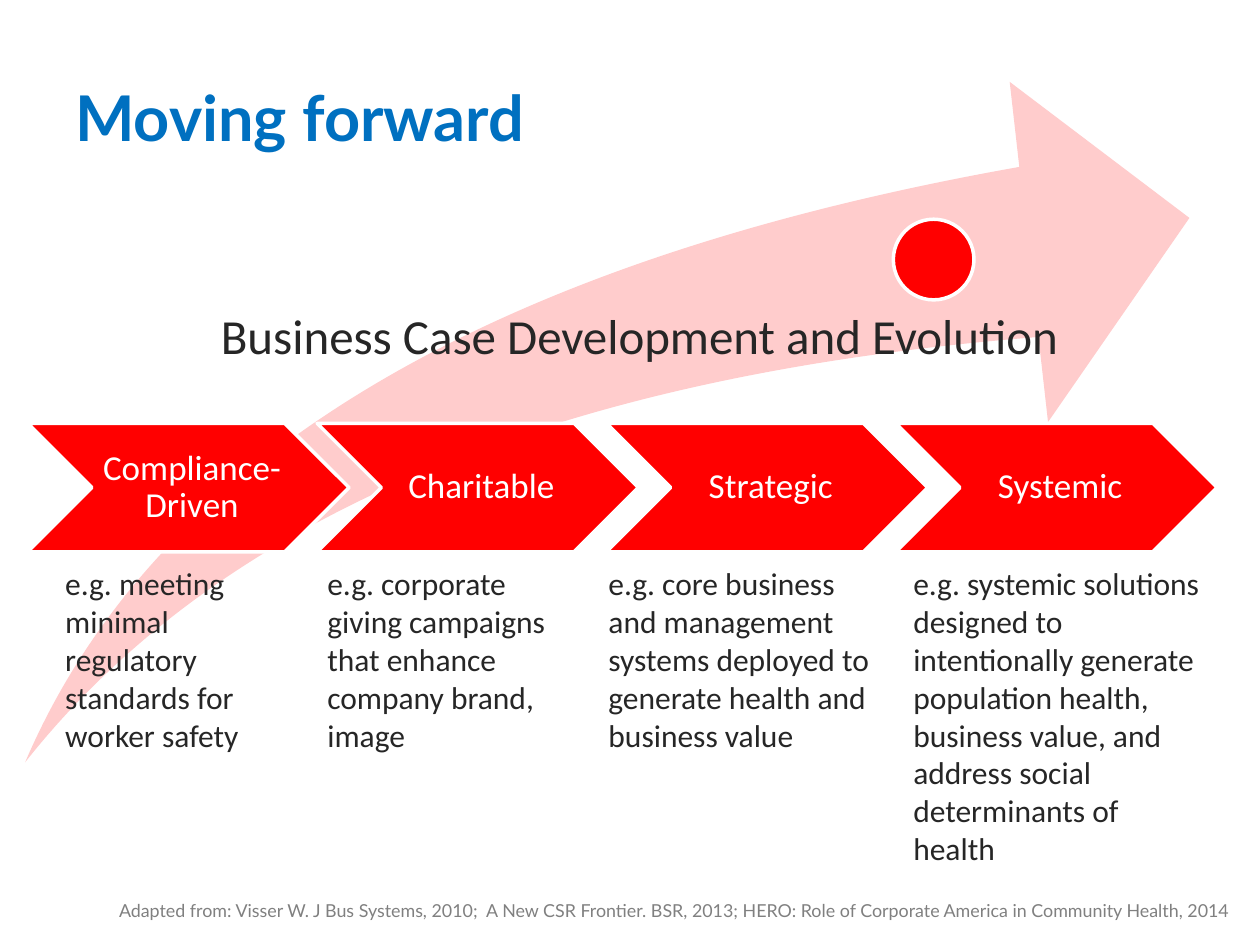
from pptx import Presentation
from pptx.dml.color import RGBColor
from pptx.enum.shapes import MSO_SHAPE as Shape
from pptx.enum.text import MSO_ANCHOR as Anchor, PP_ALIGN as Align
from pptx.util import Pt

TITLE = "Moving forward"
SUBTITLE = "Business Case Development and Evolution"
SOURCES = ("Adapted from: Visser W. J Bus Systems, 2010;  A New CSR Frontier. BSR, 2013; "
           "HERO: Role of Corporate America in Community Health, 2014")

# Stage name, example, left and width of the example
STAGES = [
    ("Compliance-Driven",
     "e.g. meeting minimal regulatory standards for worker safety", 30.2, 135.4),
    ("Charitable",
     "e.g. corporate giving campaigns that enhance company brand, image", 180, 149),
    ("Strategic",
     "e.g. core business and management systems deployed to generate health "
     "and business value", 340.6, 164.2),
    ("Systemic",
     "e.g. systemic solutions designed to intentionally generate population health, "
     "business value, and address social determinants of health", 514.8, 180.7),
]

RED, PINK, WHITE = "FF0000", "FFCCCC", "FFFFFF"
BLUE, DARK, GREY = "0070C0", "262626", "808080"

CHEVRON_LEFT, CHEVRON_TOP = 15.84, 241.9
CHEVRON_WIDTH, CHEVRON_HEIGHT, CHEVRON_STEP = 183.6, 73.4, 165.35
EXAMPLE_TOP, LINE_HEIGHT = 319, 21.6


def color(value):
    return RGBColor.from_string(value)


def add_shape(kind, left, top, width, height, fill, line=None):
    shape = page.shapes.add_shape(kind, Pt(left), Pt(top), Pt(width), Pt(height))
    shape.shadow.inherit = False
    shape.fill.solid()
    shape.fill.fore_color.rgb = color(fill)
    if line:
        shape.line.color.rgb = color(line)
        shape.line.width = Pt(2)
    else:
        shape.line.fill.background()
    return shape


def write(shape, text, size, ink, font="Calibri", bold=False, align=Align.LEFT,
          anchor=Anchor.TOP, insets=(7.2, 3.6, 7.2, 3.6), spacing=None):
    frame = shape.text_frame
    frame.word_wrap = True
    frame.vertical_anchor = anchor
    (frame.margin_left, frame.margin_top,
     frame.margin_right, frame.margin_bottom) = map(Pt, insets)
    para = frame.paragraphs[0]
    para.alignment = align
    if spacing:
        para.line_spacing = spacing
    span = para.add_run()
    span.text = text
    span.font.name = font
    span.font.size = Pt(size)
    span.font.bold = bold
    span.font.color.rgb = color(ink)


def add_text(left, top, width, height, *content, **style):
    box = page.shapes.add_textbox(Pt(left), Pt(top), Pt(width), Pt(height))
    write(box, *content, **style)


deck = Presentation()
deck.slide_width, deck.slide_height = Pt(720), Pt(540)
page = deck.slides.add_slide(deck.slide_layouts[6])

# Rising arrow with its marker and subtitle
arrow = add_shape(Shape.SWOOSH_ARROW, 14.4, 46.8, 665.3, 388.8, PINK)
arrow.adjustments[0] = arrow.adjustments[1] = 0.25
add_shape(Shape.OVAL, 510.5, 125.3, 46.1, 46.1, RED, WHITE)
add_text(69.1, 178.6, 617, 47.5, SUBTITLE, 28, DARK, align=Align.CENTER,
         insets=(0, 0, 24.5, 0), spacing=0.9)

# Stages as chevrons, each with an example below
for index, (name, example, left, width) in enumerate(STAGES):
    chevron = add_shape(Shape.CHEVRON, CHEVRON_LEFT + index * CHEVRON_STEP, CHEVRON_TOP,
                        CHEVRON_WIDTH, CHEVRON_HEIGHT, RED, WHITE)
    write(chevron, name, 20, WHITE, align=Align.CENTER, anchor=Anchor.MIDDLE,
          insets=(6.3, 2.1, 2.1, 2.1), spacing=0.9)
    lines = 8 if index == len(STAGES) - 1 else 5
    add_text(left, EXAMPLE_TOP, width, lines * LINE_HEIGHT + 7.2, example, 18, DARK)

# Sources and title
add_text(15.84, 510.5, 693.4, 23, SOURCES, 10.2, GREY, font="Lato", align=Align.RIGHT)
add_text(36, 21.6, 684, 90, TITLE, 36, BLUE, font="Lato", bold=True, anchor=Anchor.MIDDLE)

deck.save("out.pptx")
